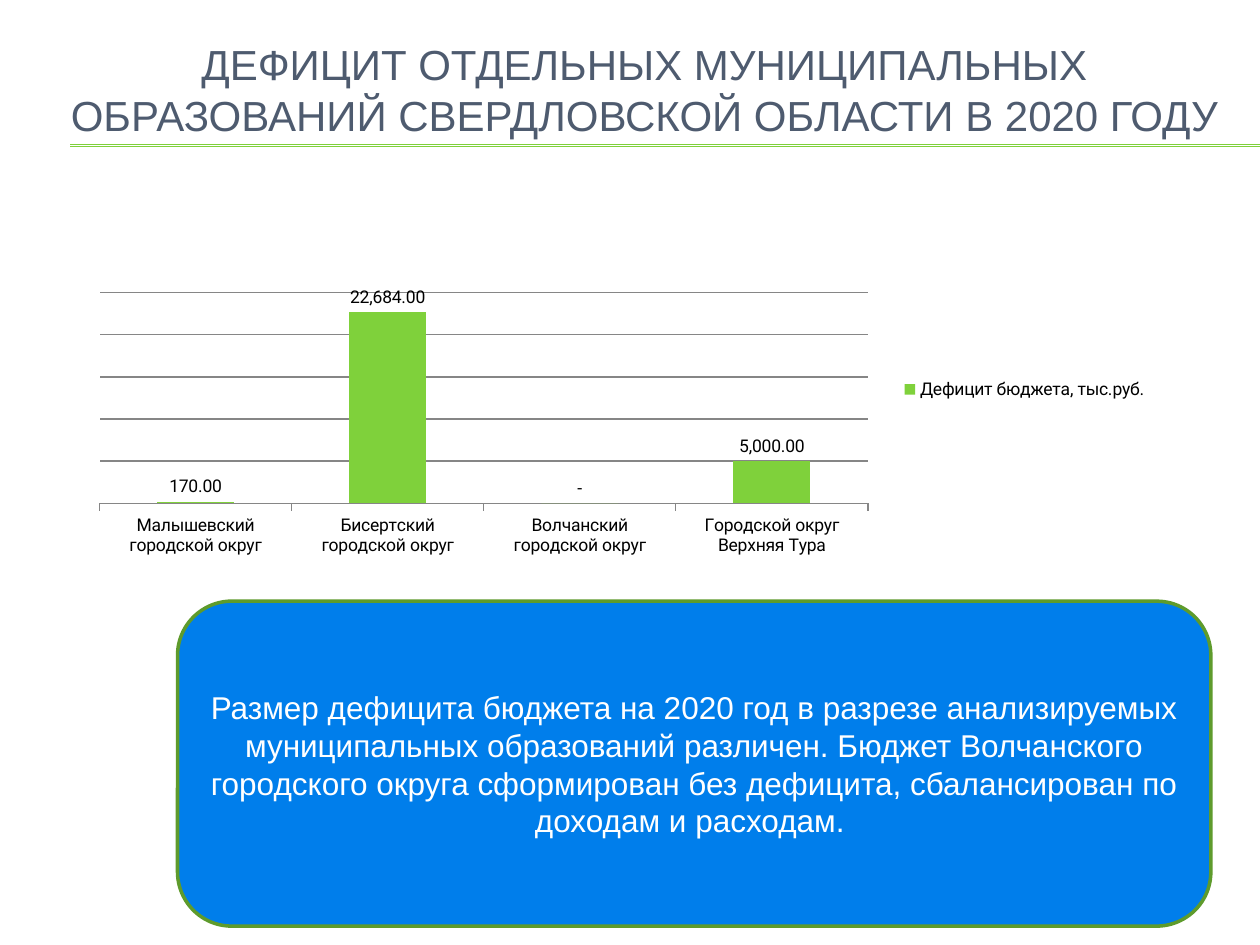
from lxml.etree import SubElement
from pptx import Presentation
from pptx.chart.data import CategoryChartData
from pptx.dml.color import RGBColor
from pptx.enum.chart import (
    XL_CHART_TYPE as ChartType,
    XL_LABEL_POSITION as LabelPosition,
    XL_LEGEND_POSITION as LegendPosition,
    XL_TICK_LABEL_POSITION as TickLabelPosition,
    XL_TICK_MARK as TickMark,
)
from pptx.enum.shapes import MSO_CONNECTOR as Connector, MSO_SHAPE as Shape
from pptx.enum.text import MSO_ANCHOR as Anchor, MSO_AUTO_SIZE as AutoSize, PP_ALIGN as Align
from pptx.oxml.ns import qn
from pptx.util import Cm, Pt

TITLE = "ДЕФИЦИТ ОТДЕЛЬНЫХ МУНИЦИПАЛЬНЫХ ОБРАЗОВАНИЙ СВЕРДЛОВСКОЙ ОБЛАСТИ В 2020 ГОДУ"
CONCLUSION = (
    "Размер дефицита бюджета на 2020 год в разрезе анализируемых муниципальных "
    "образований различен. Бюджет Волчанского городского округа сформирован без "
    "дефицита, сбалансирован по доходам и расходам. "
)
SERIES_NAME = "Дефицит бюджета, тыс.руб."
DEFICITS = {
    "Малышевский городской округ": 170,
    "Бисертский городской округ": 22684,
    "Волчанский городской округ": 0,
    "Городской округ Верхняя Тура": 5000,
}
NUMBER_FORMAT = '#,##0.00;-#,##0.00;"-"'
COLORS = {
    "title": "4E5B6F",
    "accent": "7FD13B",
    "panel": "007EEB",
    "border": "5E9B2C",
    "panel_text": "FFFFFF",
    "chart_text": "000000",
    "grid": "868686",
}
SLIDE_SIZE = (Cm(25.4), Cm(19.05))
TITLE_BOX = (Cm(0.99), Cm(0.41), Cm(24), Cm(2.77))
CHART_BOX = (Cm(1.57), Cm(4.37), Cm(21.82), Cm(6.96))
PANEL_BOX = (Cm(3.58), Cm(12.12), Cm(20.83), Cm(6.55))
RULE_LEFT = Cm(1.42)
RULE_TOPS = (Cm(2.92), Cm(2.95))
PLOT_AREA = {"x": 0.02, "y": 0.22, "w": 0.71, "h": 0.61}


def color(name):
    return RGBColor.from_string(COLORS[name])


def set_attributes(target, values):
    for name, value in values.items():
        setattr(target, name, value)


def format_line(line, color_name, width):
    line.color.rgb = color(color_name)
    line.width = Pt(width)


def format_font(font, name, size, color_name):
    set_attributes(font, {"name": name, "size": Pt(size), "bold": False})
    font.color.rgb = color(color_name)


def write_text(shape, text, size, color_name):
    frame = shape.text_frame
    frame.text = text
    set_attributes(frame, {
        "word_wrap": True,
        "auto_size": AutoSize.NONE,
        "vertical_anchor": Anchor.MIDDLE,
    })
    paragraph = frame.paragraphs[0]
    paragraph.alignment = Align.CENTER
    paragraph.line_spacing = 1.0
    format_font(paragraph.runs[0].font, "Arial", size, color_name)


def place_plot_area(chart):
    plot_area = chart.plots[0]._element.getparent()
    layout = plot_area.find(qn("c:layout"))
    if layout is None:
        layout = SubElement(plot_area, qn("c:layout"))
        plot_area.insert(0, layout)
    manual = SubElement(layout, qn("c:manualLayout"))
    settings = {"layoutTarget": "inner", "xMode": "edge", "yMode": "edge", **PLOT_AREA}
    for tag, value in settings.items():
        SubElement(manual, qn(f"c:{tag}")).set("val", str(value))


def add_rules(slide):
    for top in RULE_TOPS:
        rule = slide.shapes.add_connector(
            Connector.STRAIGHT, RULE_LEFT, top, SLIDE_SIZE[0], top)
        format_line(rule.line, "accent", 0.75)
        SubElement(rule._element.spPr, qn("a:effectLst"))


def add_panel(slide):
    panel = slide.shapes.add_shape(Shape.ROUNDED_RECTANGLE, *PANEL_BOX)
    panel.shadow.inherit = False
    panel.fill.solid()
    panel.fill.fore_color.rgb = color("panel")
    format_line(panel.line, "border", 2)
    write_text(panel, CONCLUSION, 18, "panel_text")


def add_deficit_chart(slide):
    data = CategoryChartData(number_format=NUMBER_FORMAT)
    data.categories = list(DEFICITS)
    data.add_series(SERIES_NAME, list(DEFICITS.values()))
    chart = slide.shapes.add_chart(ChartType.COLUMN_CLUSTERED, *CHART_BOX, data).chart
    set_attributes(chart, {"has_title": False, "has_legend": True})
    format_font(chart.font, "Roboto", 10, "chart_text")
    set_attributes(chart.legend, {
        "position": LegendPosition.RIGHT,
        "include_in_layout": False,
    })
    set_attributes(chart.category_axis, {
        "major_tick_mark": TickMark.OUTSIDE,
        "tick_label_position": TickLabelPosition.LOW,
    })
    set_attributes(chart.value_axis, {
        "visible": False,
        "has_major_gridlines": True,
        "minimum_scale": 0,
        "maximum_scale": 25000,
        "major_unit": 5000,
    })
    for line in (chart.category_axis.format.line,
                 chart.value_axis.major_gridlines.format.line):
        format_line(line, "grid", 0.75)

    plot = chart.plots[0]
    set_attributes(plot, {"gap_width": 150, "vary_by_categories": False,
                          "has_data_labels": True})
    set_attributes(plot.data_labels, {
        "show_value": True,
        "position": LabelPosition.OUTSIDE_END,
        "number_format": NUMBER_FORMAT,
        "number_format_is_linked": False,
    })
    fill = plot.series[0].format.fill
    fill.solid()
    fill.fore_color.rgb = color("accent")
    place_plot_area(chart)


def main():
    presentation = Presentation()
    presentation.slide_width, presentation.slide_height = SLIDE_SIZE
    slide = presentation.slides.add_slide(presentation.slide_layouts[5])
    title = slide.shapes.title
    set_attributes(title, dict(zip(("left", "top", "width", "height"), TITLE_BOX)))
    write_text(title, TITLE, 24, "title")
    add_rules(slide)
    add_panel(slide)
    add_deficit_chart(slide)
    presentation.save("out.pptx")


if __name__ == "__main__":
    main()
